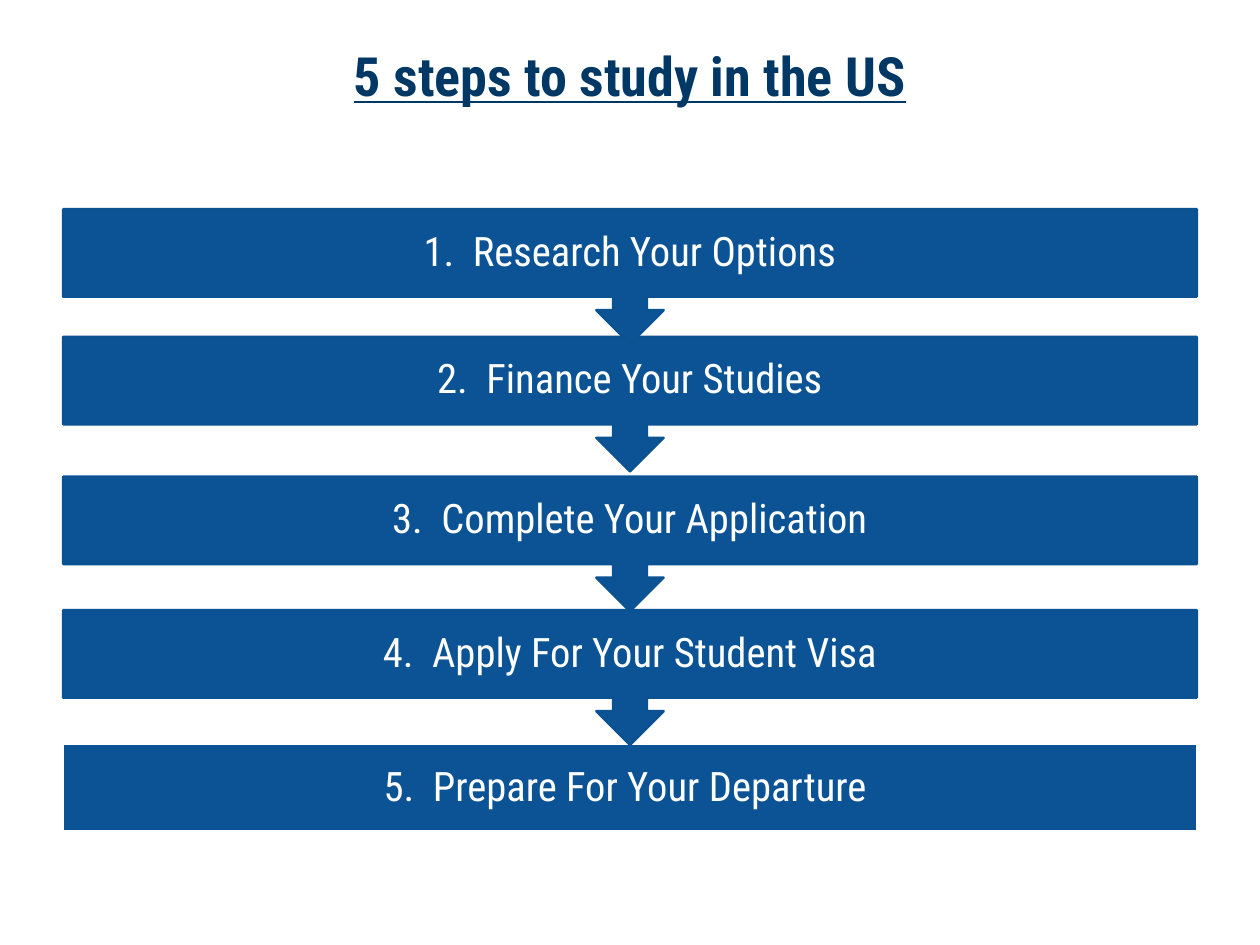
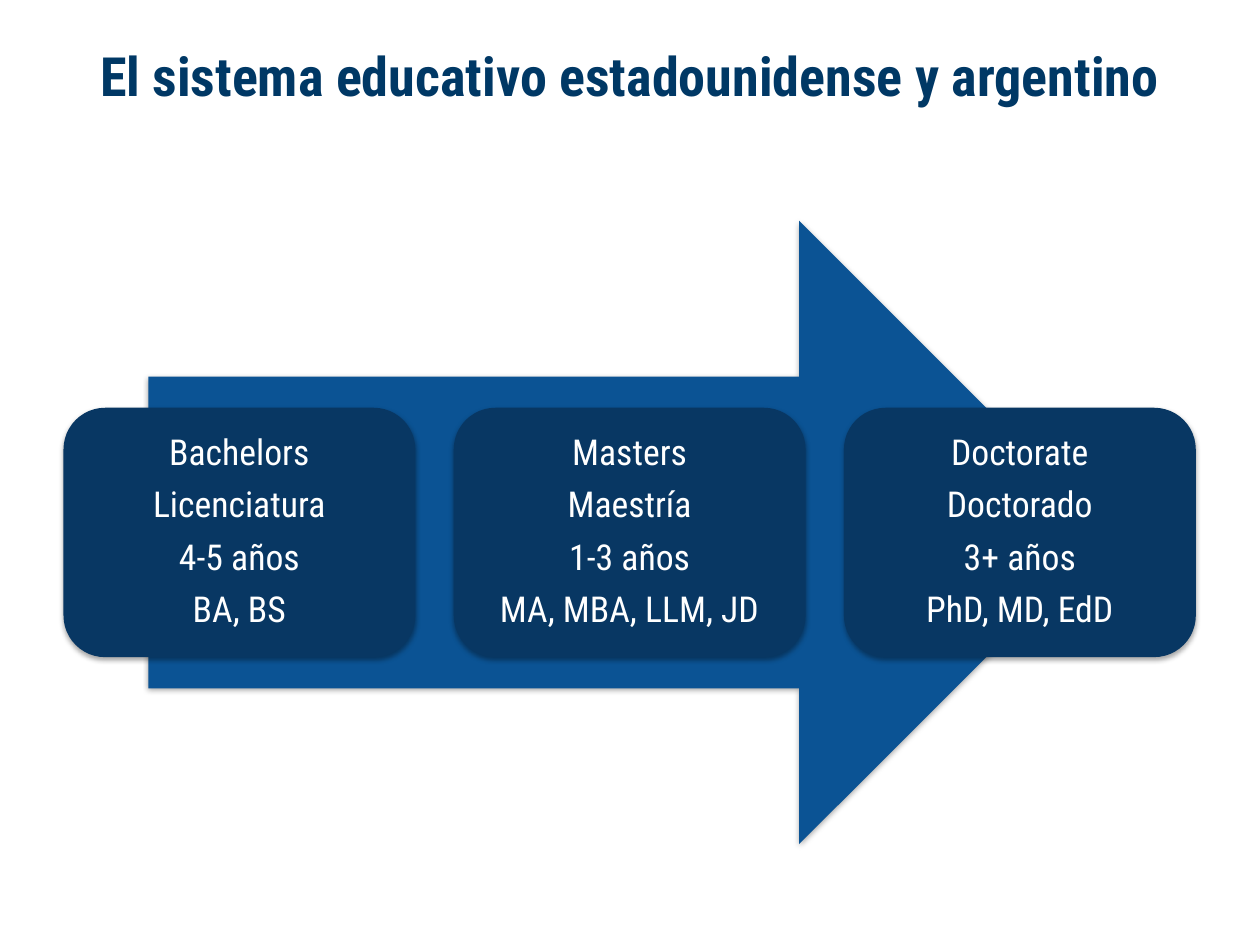
from dataclasses import dataclass

from lxml import etree
from pptx import Presentation
from pptx.dml.color import RGBColor
from pptx.enum.shapes import MSO_SHAPE as SHAPE
from pptx.enum.text import MSO_ANCHOR as ANCHOR, MSO_AUTO_SIZE as AUTO_SIZE, PP_ALIGN as ALIGN
from pptx.oxml.ns import qn
from pptx.util import Cm, Pt


@dataclass(frozen=True)
class Theme:
    font: str = "Roboto Condensed"
    title: str = "003865"
    blue: str = "0B5394"
    edge: str = "0B5292"
    navy: str = "083763"
    white: str = "FFFFFF"
    shadow: str = "000000"
    title_size: int = 44
    step_size: int = 33
    card_size: int = 29


@dataclass(frozen=True)
class Box:
    """A region in centimetres."""
    left: float
    top: float
    width: float
    height: float

    def emu(self):
        return [Cm(v) for v in (self.left, self.top, self.width, self.height)]


THEME = Theme()
TITLE_BOX = Box(1.81, 1.09, 32.5, 4.52)
STEPS_BOX = Box(1.81, 6, 32.5, 17.85)
DEGREES_BOX = Box(1.82, 6.33, 32.46, 17.88)

# Each step with its distance from the top of the region
STEPS = [
    ("1.  Research Your Options", 0),
    ("2.  Finance Your Studies", 3.66),
    ("3.  Complete Your Application", 7.67),
    ("4.  Apply For Your Student Visa", 11.5),
    ("5.  Prepare For Your Departure ", 15.34),
]
DEGREES = [
    ("Bachelors", "Licenciatura", "4-5 años", "BA, BS"),
    ("Masters", "Maestría", "1-3 años", "MA, MBA, LLM, JD"),
    ("Doctorate", "Doctorado", "3+ años", "PhD, MD, EdD"),
]


def style_font(font, size, color, bold=None):
    font.name = THEME.font
    font.size = Pt(size)
    font.bold = bold
    font.color.rgb = RGBColor.from_string(color)


def add_block(slide, kind, box, fill, line=None):
    sp = slide.shapes.add_shape(kind, *box.emu())
    sp.shadow.inherit = False
    sp.fill.solid()
    sp.fill.fore_color.rgb = RGBColor.from_string(fill)
    if line:
        sp.line.color.rgb = RGBColor.from_string(line)
        sp.line.width = Pt(2)
    else:
        sp.line.fill.background()
    return sp


def add_soft_shadow(sp):
    effects = sp._element.spPr.find(qn("a:effectLst"))
    shadow = etree.SubElement(effects, qn("a:outerShdw"), blurRad=str(Pt(4)),
                              dist=str(Pt(2)), dir="5400000", rotWithShape="0")
    color = etree.SubElement(shadow, qn("a:srgbClr"), val=THEME.shadow)
    etree.SubElement(color, qn("a:alpha"), val="35000")


def write_lines(sp, lines, size, inset):
    tf = sp.text_frame
    tf.word_wrap = True
    tf.vertical_anchor = ANCHOR.MIDDLE
    tf.margin_left = tf.margin_right = tf.margin_top = tf.margin_bottom = Cm(inset)
    tf.text = "\n".join(lines)
    for p in tf.paragraphs:
        p.alignment = ALIGN.CENTER
        p.line_spacing = 0.9
        p.space_after = Pt(round(0.37 * size))
        style_font(p.font, size, THEME.white)


def prepare_layout(prs):
    """Place the shared title on the title-only layout."""
    layout = prs.slide_layouts[5]
    title = next(ph for ph in layout.placeholders if ph.placeholder_format.idx == 0)
    title.left, title.top, title.width, title.height = TITLE_BOX.emu()
    title.text_frame.vertical_anchor = ANCHOR.TOP
    title.text_frame.auto_size = AUTO_SIZE.NONE
    return layout


def add_titled_slide(prs, layout, text, underline=None):
    slide = prs.slides.add_slide(layout)
    tf = slide.shapes.title.text_frame
    tf.text = text
    p = tf.paragraphs[0]
    p.alignment = ALIGN.CENTER
    style_font(p.font, THEME.title_size, THEME.title, bold=True)
    p.font.underline = underline
    return slide


def add_steps(slide, box):
    """Stack the steps from the last one up, so that each arrow overlaps the next bar."""
    bar_h, callout_h = 2.51, 3.86
    last = STEPS[-1]
    for step in reversed(STEPS):
        text, offset = step
        if step is last:
            kind, height, line = SHAPE.RECTANGLE, bar_h, THEME.white
        else:
            kind, height, line = SHAPE.DOWN_ARROW_CALLOUT, callout_h, THEME.edge
        area = Box(box.left, box.top + offset, box.width, height)
        sp = add_block(slide, kind, area, THEME.blue, line)
        write_lines(sp, [text], THEME.step_size, inset=0.4)


def add_degrees(slide, box):
    """Lay a row of degree cards over a wide arrow."""
    arrow_w = 0.85 * box.width
    arrow = Box(box.left + (box.width - arrow_w) / 2, box.top, arrow_w, box.height)
    add_soft_shadow(add_block(slide, SHAPE.RIGHT_ARROW, arrow, THEME.blue))

    gap = 1.1
    card_w = (box.width - gap * (len(DEGREES) - 1)) / len(DEGREES)
    card_h = 0.4 * box.height
    card_top = box.top + (box.height - card_h) / 2
    for i, lines in enumerate(DEGREES):
        area = Box(box.left + i * (card_w + gap), card_top, card_w, card_h)
        card = add_block(slide, SHAPE.ROUNDED_RECTANGLE, area, THEME.navy)
        add_soft_shadow(card)
        write_lines(card, lines, THEME.card_size, inset=0.3)


def main():
    prs = Presentation()
    prs.slide_width, prs.slide_height = Cm(36.12), Cm(27.1)
    layout = prepare_layout(prs)
    add_steps(add_titled_slide(prs, layout, "5 steps to study in the US", underline=True),
              STEPS_BOX)
    add_degrees(add_titled_slide(prs, layout, "El sistema educativo estadounidense y argentino"),
                DEGREES_BOX)
    prs.save("out.pptx")


if __name__ == "__main__":
    main()
